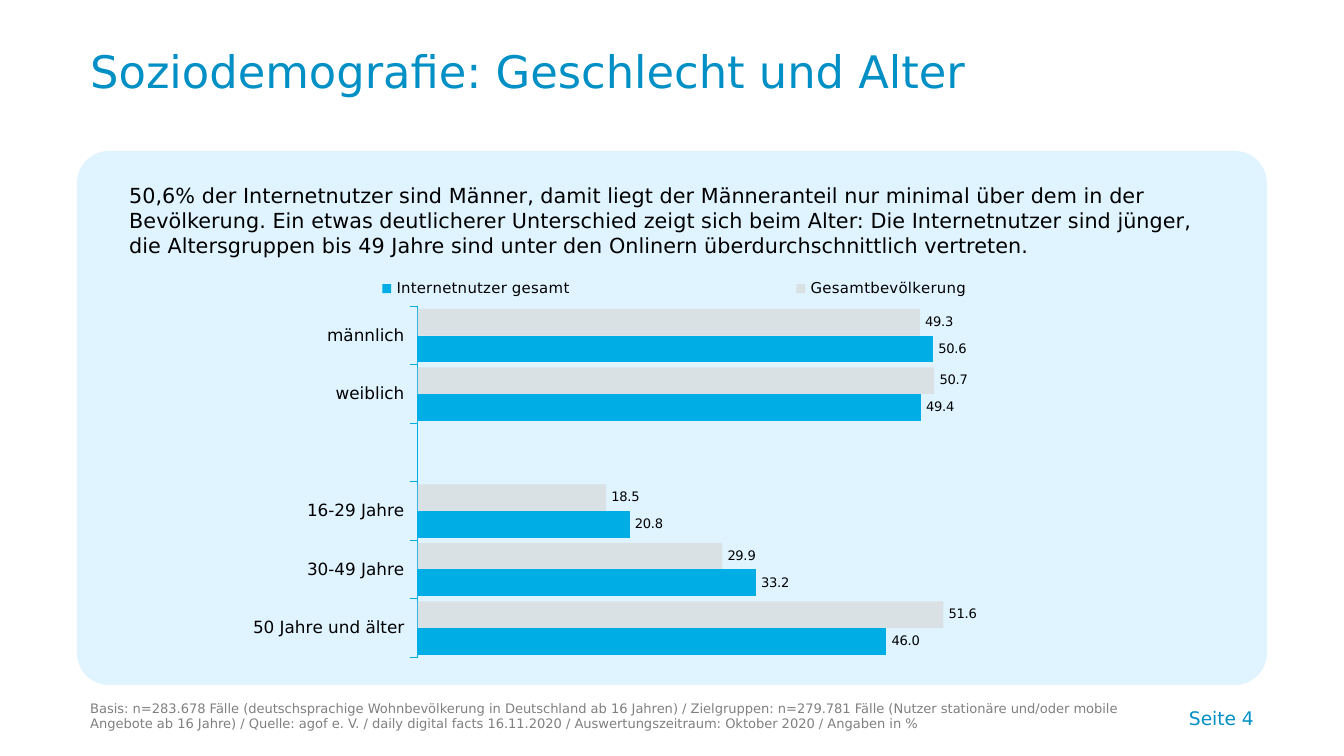
"""Build the slide on gender and age of internet users."""
from lxml.etree import SubElement
from pptx import Presentation
from pptx.chart.data import CategoryChartData
from pptx.dml.color import RGBColor
from pptx.enum.chart import XL_CHART_TYPE, XL_LABEL_POSITION, XL_LEGEND_POSITION, XL_TICK_LABEL_POSITION, XL_TICK_MARK
from pptx.enum.shapes import MSO_SHAPE
from pptx.enum.text import MSO_ANCHOR, PP_ALIGN
from pptx.oxml import parse_xml
from pptx.oxml.ns import nsdecls, qn
from pptx.util import Pt

PX = 914400 / 134.4
FACE = "DejaVu Sans"
PALE = RGBColor(0xDF, 0xF4, 0xFF)
BLUE = RGBColor(0x00, 0x90, 0xC5)
CYAN = RGBColor(0x00, 0xAD, 0xE4)
GREY = RGBColor(0x80, 0x80, 0x80)
LIGHT = RGBColor(0xD9, 0xD9, 0xD9)
BLACK = RGBColor(0, 0, 0)

PANEL = (77, 151, 1190, 534)
CHART = (116, 263, 1117, 395)
PLOT = (0.27, 0.11, 0.73, 0.89)
KEY = (0.04, 0.02, 0.92, 0.09)

TEXTS = [
    ("Seite 4", (879, 685, 388, 51), 10, BLUE, MSO_ANCHOR.BOTTOM,
     {"alignment": PP_ALIGN.RIGHT}),
    ("Soziodemografie: Geschlecht und Alter", (77, 38, 985, 75), 24, BLUE,
     MSO_ANCHOR.MIDDLE, {"line_spacing": 0.8}),
    ("50,6% der Internetnutzer sind Männer, damit liegt der Männeranteil nur minimal "
     "über dem in der Bevölkerung. Ein etwas deutlicherer Unterschied zeigt sich beim "
     "Alter: Die Internetnutzer sind jünger, die Altersgruppen bis 49 Jahre sind unter "
     "den Onlinern überdurchschnittlich vertreten.",
     (116, 176, 1117, 97), 11.1, BLACK, MSO_ANCHOR.TOP, {}),
    ("Basis: n=283.678 Fälle (deutschsprachige Wohnbevölkerung in Deutschland ab 16 "
     "Jahren) / Zielgruppen: n=279.781 Fälle (Nutzer stationäre und/oder mobile Angebote "
     "ab 16 Jahre) / Quelle: agof e. V. / daily digital facts 16.11.2020 / "
     "Auswertungszeitraum: Oktober 2020 / Angaben in %",
     (77, 685, 1063, 53), 7, GREY, MSO_ANCHOR.BOTTOM, {}),
]

GROUPS = ["männlich", "weiblich", "", "16-29 Jahre", "30-49 Jahre", "50 Jahre und älter"]
SERIES = [
    ("Gesamtbevölkerung", (49.3, 50.7, None, 18.5, 29.9, 51.6), LIGHT, 70),
    ("Internetnutzer gesamt", (50.6, 49.4, None, 20.8, 33.2, 46.0), CYAN, 100),
]


def scale(box):
    return [round(v * PX) for v in box]


def apply(item, values):
    for name, value in values.items():
        setattr(item, name, value)


def style(font, size, color=BLACK):
    apply(font, {"name": FACE, "size": Pt(size)})
    font.color.rgb = color


def paint(form, color, alpha=100):
    form.fill.solid()
    form.fill.fore_color.rgb = color
    form.line.fill.background()
    if alpha < 100:
        tint = form.fill._xPr.find(".//" + qn("a:srgbClr"))
        SubElement(tint, qn("a:alpha"), val=str(alpha * 1000))


def layout(box, inner=False):
    target = '<c:layoutTarget val="inner"/>' if inner else ""
    modes = "".join(f'<c:{k}Mode val="edge"/>' for k in "xy")
    sizes = "".join(f'<c:{k} val="{v}"/>' for k, v in zip("xywh", box))
    return parse_xml(f'<c:layout {nsdecls("c")}><c:manualLayout>{target}{modes}{sizes}'
                     "</c:manualLayout></c:layout>")


def add_panel(slide):
    panel = slide.shapes.add_shape(MSO_SHAPE.ROUNDED_RECTANGLE, *scale(PANEL))
    panel.adjustments[0] = 0.06
    panel.shadow.inherit = False
    paint(panel, PALE)


def add_text(slide, text, box, size, color, anchor, values):
    frame = slide.shapes.add_textbox(*scale(box)).text_frame
    apply(frame, {"word_wrap": True, "vertical_anchor": anchor, "text": text})
    para = frame.paragraphs[0]
    apply(para, values)
    style(para.runs[0].font, size, color)


def add_bars(slide):
    data = CategoryChartData(number_format="0.0")
    data.categories = GROUPS
    for name, values, *_ in SERIES:
        data.add_series(name, values)
    chart = slide.shapes.add_chart(XL_CHART_TYPE.BAR_CLUSTERED, *scale(CHART), data).chart
    apply(chart, {"has_title": False, "has_legend": True})
    style(chart.font, 9)
    plot = chart.plots[0]
    apply(plot, {"gap_width": 20, "overlap": 0, "vary_by_categories": False})
    for series, (*_, color, alpha) in zip(plot.series, SERIES):
        paint(series.format, color, alpha)
        labels = series.data_labels
        apply(labels, {"show_value": True, "number_format": "#,##0.0",
                       "number_format_is_linked": False,
                       "position": XL_LABEL_POSITION.OUTSIDE_END})
        style(labels.font, 7)
    axis = chart.category_axis
    apply(axis, {"reverse_order": True, "has_major_gridlines": False,
                 "major_tick_mark": XL_TICK_MARK.OUTSIDE,
                 "minor_tick_mark": XL_TICK_MARK.NONE,
                 "tick_label_position": XL_TICK_LABEL_POSITION.LOW})
    axis.format.line.color.rgb = CYAN
    axis.format.line.width = Pt(0.75)
    apply(chart.value_axis, {"visible": False, "has_major_gridlines": False,
                             "minimum_scale": 0, "maximum_scale": 80})
    legend = chart.legend
    apply(legend, {"position": XL_LEGEND_POSITION.TOP, "include_in_layout": False})
    style(legend.font, 8)
    area = chart.element.find(".//" + qn("c:plotArea"))
    key = area.getparent().find(qn("c:legend"))
    for part in (area, key):
        for old in part.findall(qn("c:layout")):
            part.remove(old)
    area.insert(0, layout(PLOT, True))
    key.find(qn("c:legendPos")).addnext(layout(KEY))


def main():
    deck = Presentation()
    deck.slide_width, deck.slide_height = scale((1344, 756))
    slide = deck.slides.add_slide(deck.slide_layouts[6])
    add_panel(slide)
    add_bars(slide)
    for entry in TEXTS:
        add_text(slide, *entry)
    deck.save("out.pptx")


if __name__ == "__main__":
    main()
